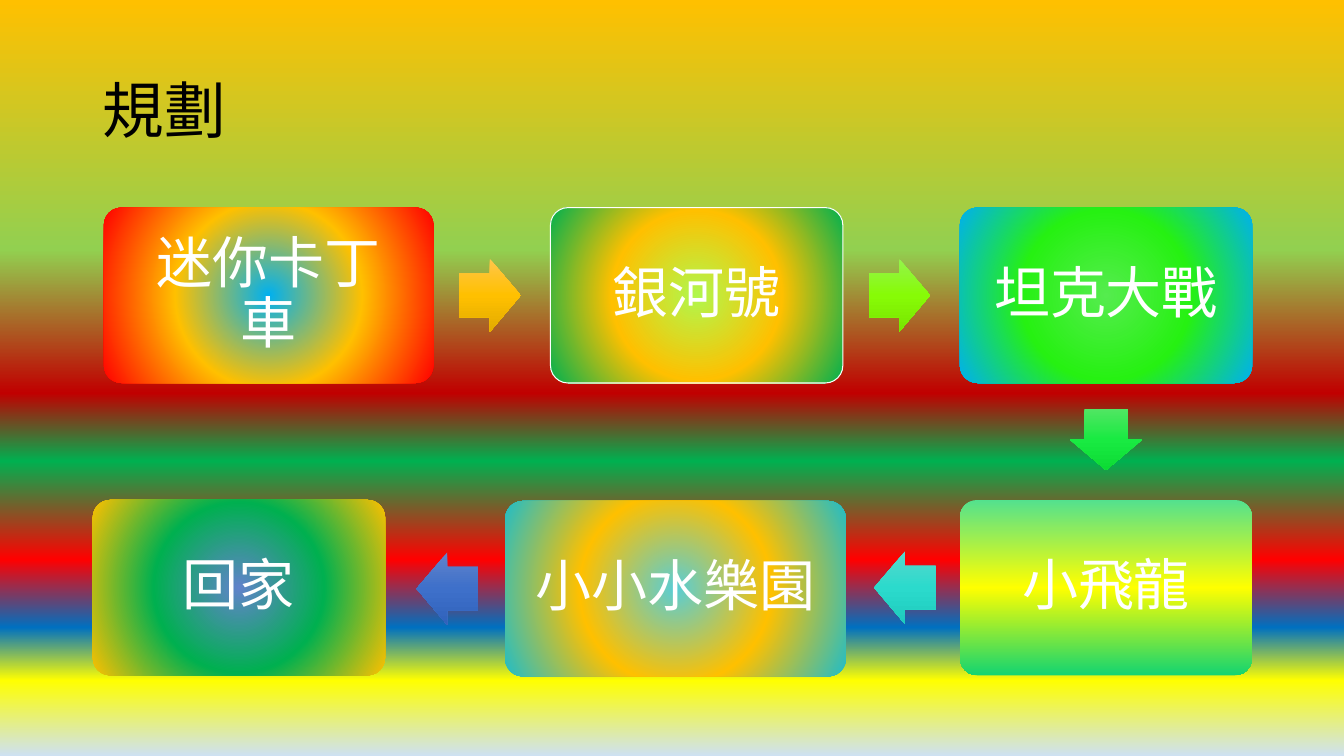
from dataclasses import dataclass

from lxml import etree
from pptx import Presentation
from pptx.dml.color import RGBColor
from pptx.enum.shapes import MSO_SHAPE as Shape
from pptx.enum.text import MSO_ANCHOR as Anchor, PP_ALIGN as Align
from pptx.oxml.ns import qn
from pptx.util import Inches, Pt


@dataclass(frozen=True)
class Theme:
    font: str = "Calibri"
    title_size: int = 44
    stop_size: int = 40
    title_color: str = "000000"
    stop_color: str = "FFFFFF"
    outline: str = "FFFFFF"
    background: tuple = (
        (0, "FFC000"), (33, "92D050"), (52, "C00000"), (61, "00B050"),
        (74, "FF0000"), (83, "0070C0"), (90, "FFFF00"), (100, "CEE1F2"),
    )


@dataclass(frozen=True)
class Stop:
    name: str
    left: float
    top: float
    width: float
    colors: tuple
    radial: bool = True
    outlined: bool = False
    height: float = 1.74

    @property
    def center(self):
        return self.left + self.width / 2, self.top + self.height / 2


THEME = Theme()
ROW_1, ROW_2 = 2.06, 4.96
ROUTE = (
    Stop("迷你卡丁車", 1.03, ROW_1, 3.27, ("00B0F0", "FFC000", "FF0000")),
    Stop("銀河號", 5.46, ROW_1, 2.9, ("B1F74C", "FFC000", "00B050"), outlined=True),
    Stop("坦克大戰", 9.52, ROW_1, 2.9, ("55EC4E", "26F112", "00B0F0")),
    Stop("小飛龍", 9.52, ROW_2, 2.9, ("53E18E", "FFFF00", "13D471"), radial=False),
    Stop("小小水樂園", 5.01, ROW_2 + 0.01, 3.38, ("59CDD6", "FFC000", "21BDC8")),
    Stop("回家", 0.92, ROW_2, 2.9, ("6183CB", "00B050", "FFC000")),
)
ARROW_COLORS = (
    ("FFC64B", "FFC000", "E3AB00"),
    ("94F44C", "87FB06", "78E500"),
    ("51E663", "19EA42", "0CDB34"),
    ("58D8CC", "2BDACC", "1ECBBD"),
    ("6183CB", "3E70CA", "3062BB"),
)


def apply_gradient(fill, properties, steps, radial=False):
    fill.gradient()
    gradient = properties.find(qn("a:gradFill"))
    for child in list(gradient):
        gradient.remove(child)
    gradient.set("rotWithShape", "0")
    step_list = etree.SubElement(gradient, qn("a:gsLst"))
    for position, color in steps:
        step = etree.SubElement(step_list, qn("a:gs"), pos=str(position * 1000))
        etree.SubElement(step, qn("a:srgbClr"), val=color)
    if radial:
        circle = etree.SubElement(gradient, qn("a:path"), {"path": "circle"})
        etree.SubElement(circle, qn("a:fillToRect"), l="50000", t="50000", r="50000", b="50000")
    else:
        etree.SubElement(gradient, qn("a:lin"), ang="5400000", scaled="0")


def write_text(frame, text, *, size, color, align=Align.LEFT, inset_x=0.1, inset_y=0.05):
    frame.word_wrap = True
    frame.vertical_anchor = Anchor.MIDDLE
    frame.margin_left = frame.margin_right = Inches(inset_x)
    frame.margin_top = frame.margin_bottom = Inches(inset_y)
    paragraph = frame.paragraphs[0]
    paragraph.alignment = align
    paragraph.line_spacing = 0.9
    run = paragraph.add_run()
    run.text = text
    run.font.name = THEME.font
    run.font.size = Pt(size)
    run.font.color.rgb = RGBColor.from_string(color)


def add_gradient_shape(slide, kind, box, colors, radial=False):
    shape = slide.shapes.add_shape(kind, *map(Inches, box))
    shape.shadow.inherit = False
    shape.line.fill.background()
    properties = shape.fill._xPr
    apply_gradient(shape.fill, properties, zip((0, 50, 100), colors), radial)
    return shape


def add_background(slide):
    fill = slide.background.fill
    apply_gradient(fill, fill._xPr, THEME.background)


def add_title(slide, box, text):
    title = slide.shapes.add_textbox(*map(Inches, box))
    write_text(title.text_frame, text, size=THEME.title_size, color=THEME.title_color)


def add_stop(slide, stop):
    box = stop.left, stop.top, stop.width, stop.height
    card = add_gradient_shape(slide, Shape.ROUNDED_RECTANGLE, box, stop.colors, stop.radial)
    card.adjustments[0] = 0.1
    if stop.outlined:
        card.line.color.rgb = RGBColor.from_string(THEME.outline)
        card.line.width = Pt(0.75)
    write_text(card.text_frame, stop.name, size=THEME.stop_size, color=THEME.stop_color,
               align=Align.CENTER, inset_x=0.22, inset_y=0.22)


def add_arrow(slide, start, end, colors, length=0.61, breadth=0.72, setback=0.02):
    if start.left == end.left:
        x = start.center[0]
        y = (start.top + start.height + end.top) / 2 - setback
        angle = 90
    elif start.left < end.left:
        x = (start.left + start.width + end.left) / 2 - setback
        y = start.center[1]
        angle = 0
    else:
        x = (end.left + end.width + start.left) / 2 + setback
        y = start.center[1]
        angle = 180
    box = x - length / 2, y - breadth / 2, length, breadth
    arrow = add_gradient_shape(slide, Shape.RIGHT_ARROW, box, colors)
    arrow.adjustments[0] = 0.6
    arrow.adjustments[1] = 0.5
    arrow.rotation = angle


def add_route(slide, stops):
    for stop in stops:
        add_stop(slide, stop)
    for start, end, colors in zip(stops, stops[1:], ARROW_COLORS):
        add_arrow(slide, start, end, colors)


def main():
    deck = Presentation()
    deck.slide_width, deck.slide_height = Inches(13.33), Inches(7.5)
    slide = deck.slides.add_slide(deck.slide_layouts[6])
    add_background(slide)
    add_title(slide, (0.92, 0.4, 11.5, 1.45), "規劃")
    add_route(slide, ROUTE)
    deck.save("out.pptx")


if __name__ == "__main__":
    main()
